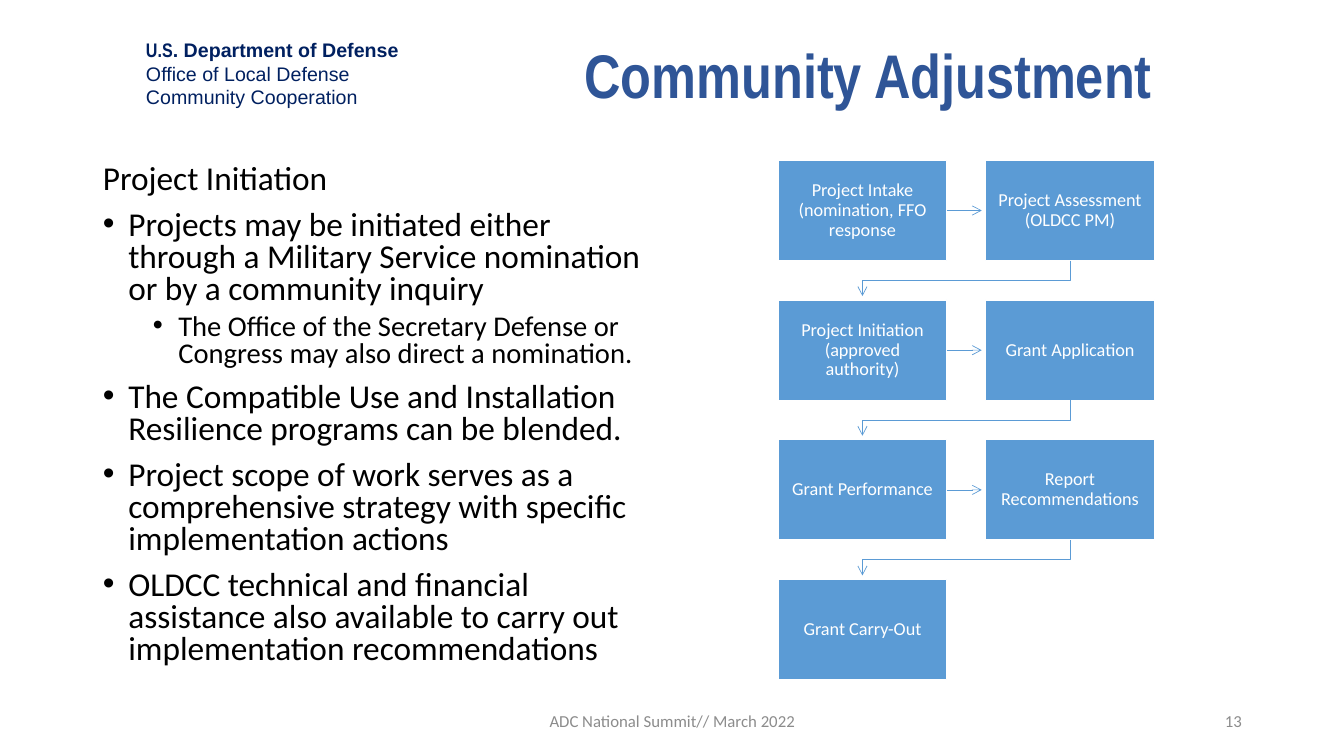
from dataclasses import dataclass

from lxml import etree
from pptx import Presentation
from pptx.dml.color import RGBColor
from pptx.enum.shapes import MSO_CONNECTOR, MSO_SHAPE
from pptx.enum.text import MSO_ANCHOR, MSO_AUTO_SIZE, PP_ALIGN
from pptx.oxml.ns import qn
from pptx.util import Cm, Pt

LEFT, CENTER, RIGHT = PP_ALIGN.LEFT, PP_ALIGN.CENTER, PP_ALIGN.RIGHT
MIDDLE, TOP = MSO_ANCHOR.MIDDLE, MSO_ANCHOR.TOP
RECTANGLE = MSO_SHAPE.RECTANGLE
STRAIGHT = MSO_CONNECTOR.STRAIGHT
NO_AUTOFIT = MSO_AUTO_SIZE.NONE

BLUE, WHITE, BLACK = "5B9BD5", "FFFFFF", "000000"
TITLE_BLUE, NAVY, GRAY = "2F5597", "002060", "8C8C8C"

# Flowchart grid, in centimetres
GRID_LEFT, GRID_TOP = 19.61, 4.04
STEP_WIDTH, STEP_HEIGHT = 4.25, 2.53
COLUMN_PITCH, ROW_PITCH = 5.23, 3.52
ARROW_GAP = 0.1
COLUMNS = 2


@dataclass
class Item:
    text: str
    level: int = 0
    bullet: bool = True


@dataclass
class Label:
    lines: list[str]
    left: float
    top: float
    width: float
    height: float
    size: float
    color: str
    font: str = "Calibri"
    align: PP_ALIGN = LEFT
    anchor: MSO_ANCHOR = MIDDLE


ITEMS = [
    Item("Project Initiation", bullet=False),
    Item("Projects may be initiated either through a Military Service nomination or by a community inquiry"),
    Item("The Office of the Secretary Defense or Congress may also direct a nomination.", level=1),
    Item("The Compatible Use and Installation Resilience programs can be blended."),
    Item("Project scope of work serves as a comprehensive strategy with specific implementation actions"),
    Item("OLDCC technical and financial assistance also available to carry out implementation recommendations"),
]
STEPS = [
    "Project Intake (nomination, FFO response",
    "Project Assessment (OLDCC PM)",
    "Project Initiation (approved authority)",
    "Grant Application",
    "Grant Performance",
    "Report Recommendations",
    "Grant Carry-Out",
]
OFFICE = Label(["", "Office of Local Defense", "Community Cooperation"],
               3.43, 0.84, 7.06, 2.06, 14, NAVY, "Arial", anchor=TOP)
FOOTERS = [
    Label(["ADC National Summit// March 2022"], 11.23, 17.65, 11.43, 1.02, 12, GRAY, align=CENTER),
    Label(["13"], 23.93, 17.65, 7.62, 1.02, 12, GRAY, align=RIGHT),
]


def rgb(value: str) -> RGBColor:
    return RGBColor.from_string(value)


def style_span(span, font: str, size: float, color: str, bold: bool = False) -> None:
    span.font.name = font
    span.font.size = Pt(size)
    span.font.color.rgb = rgb(color)
    span.font.bold = bold


def place(shape, left: float, top: float, width: float, height: float) -> None:
    shape.left, shape.top = Cm(left), Cm(top)
    shape.width, shape.height = Cm(width), Cm(height)


def add_bullet(para, level: int) -> None:
    properties = para._p.get_or_add_pPr()
    properties.set("marL", str(Cm(1.9 if level else 0.64)))
    properties.set("indent", str(-Cm(0.64)))
    etree.SubElement(properties, qn("a:buFont")).set("typeface", "Arial")
    etree.SubElement(properties, qn("a:buChar")).set("char", "•")


def remove_bullet(para) -> None:
    properties = para._p.get_or_add_pPr()
    properties.set("marL", "0")
    properties.set("indent", "0")
    etree.SubElement(properties, qn("a:buNone"))


def fill_body(body) -> None:
    frame = body.text_frame
    frame.auto_size = NO_AUTOFIT
    frame.text = "\n".join(item.text for item in ITEMS)
    for number, (para, item) in enumerate(zip(frame.paragraphs, ITEMS)):
        para.level = item.level
        para.line_spacing = 0.8
        para.space_before = Pt(0 if number == 0 else 5 if item.level else 10)
        if item.bullet:
            add_bullet(para, item.level)
        else:
            remove_bullet(para)
        style_span(para.runs[0], "Calibri", 20.4 if item.level else 23.8, BLACK)


def add_label(page, label: Label):
    box = page.shapes.add_textbox(Cm(label.left), Cm(label.top), Cm(label.width), Cm(label.height))
    frame = box.text_frame
    frame.word_wrap = True
    frame.vertical_anchor = label.anchor
    frame.text = "\n".join(label.lines)
    for para in frame.paragraphs:
        para.alignment = label.align
        for span in para.runs:
            style_span(span, label.font, label.size, label.color)
    return box


def add_step(page, text: str, column: int, row: int):
    box = page.shapes.add_shape(
        RECTANGLE, Cm(GRID_LEFT + column * COLUMN_PITCH), Cm(GRID_TOP + row * ROW_PITCH),
        Cm(STEP_WIDTH), Cm(STEP_HEIGHT))
    box.shadow.inherit = False
    box.fill.solid()
    box.fill.fore_color.rgb = rgb(BLUE)
    box.line.color.rgb = rgb(WHITE)
    box.line.width = Pt(1)
    frame = box.text_frame
    frame.word_wrap = True
    frame.vertical_anchor = MIDDLE
    frame.margin_left = frame.margin_right = frame.margin_top = frame.margin_bottom = Cm(0.25)
    frame.text = text
    para = frame.paragraphs[0]
    para.alignment = CENTER
    para.line_spacing = 0.9
    style_span(para.runs[0], "Calibri", 13, WHITE)
    return box


def style_arrow(arrow) -> None:
    arrow.line.color.rgb = rgb(BLUE)
    arrow.line.width = Pt(0.5)
    etree.SubElement(arrow.line._get_or_add_ln(), qn("a:tailEnd")).set("type", "arrow")


def join_across(page, source, target) -> None:
    middle = source.top + source.height // 2
    arrow = page.shapes.add_connector(
        STRAIGHT, source.left + source.width, middle, target.left - Cm(ARROW_GAP), middle)
    arrow.begin_connect(source, 3)
    style_arrow(arrow)
    etree.SubElement(arrow._element.spPr, qn("a:effectLst"))


def join_down(page, source, target) -> None:
    start_x, end_x = (box.left + box.width // 2 for box in (source, target))
    bottom = source.top + source.height
    bend = (bottom + target.top) // 2
    path = page.shapes.build_freeform(start_x, bottom)
    path.add_line_segments(
        [(start_x, bend), (end_x, bend), (end_x, target.top - Cm(ARROW_GAP))], close=False)
    arrow = path.convert_to_shape()
    arrow.shadow.inherit = False
    arrow.fill.background()
    style_arrow(arrow)


def main() -> None:
    deck = Presentation()
    deck.slide_width, deck.slide_height = Cm(33.87), Cm(19.05)
    page = deck.slides.add_slide(deck.slide_layouts[1])

    # Title and list
    title, body = page.placeholders
    place(title, 10.13, 0.13, 23.52, 3.68)
    title.text_frame.text = "Community Adjustment"
    title.text_frame.auto_size = NO_AUTOFIT
    title.text_frame.vertical_anchor = MIDDLE
    heading = title.text_frame.paragraphs[0]
    heading.alignment = CENTER
    heading.line_spacing = 0.9
    style_span(heading.runs[0], "Arial Narrow", 44, TITLE_BLUE, bold=True)
    place(body, 2.34, 4.04, 14.4, 13.13)
    fill_body(body)

    # Flowchart
    boxes = [add_step(page, text, number % COLUMNS, number // COLUMNS)
             for number, text in enumerate(STEPS)]
    for number, (source, target) in enumerate(zip(boxes, boxes[1:])):
        join = join_across if number % COLUMNS == 0 else join_down
        join(page, source, target)

    # Footer and office name
    for footer in FOOTERS:
        add_label(page, footer)
    department = add_label(page, OFFICE).text_frame.paragraphs[0]
    for text, font in (("U.S", "Arial Narrow"), (". Department of Defense", "Arial")):
        span = department.add_run()
        span.text = text
        style_span(span, font, OFFICE.size, NAVY, bold=True)

    deck.save("out.pptx")


if __name__ == "__main__":
    main()
